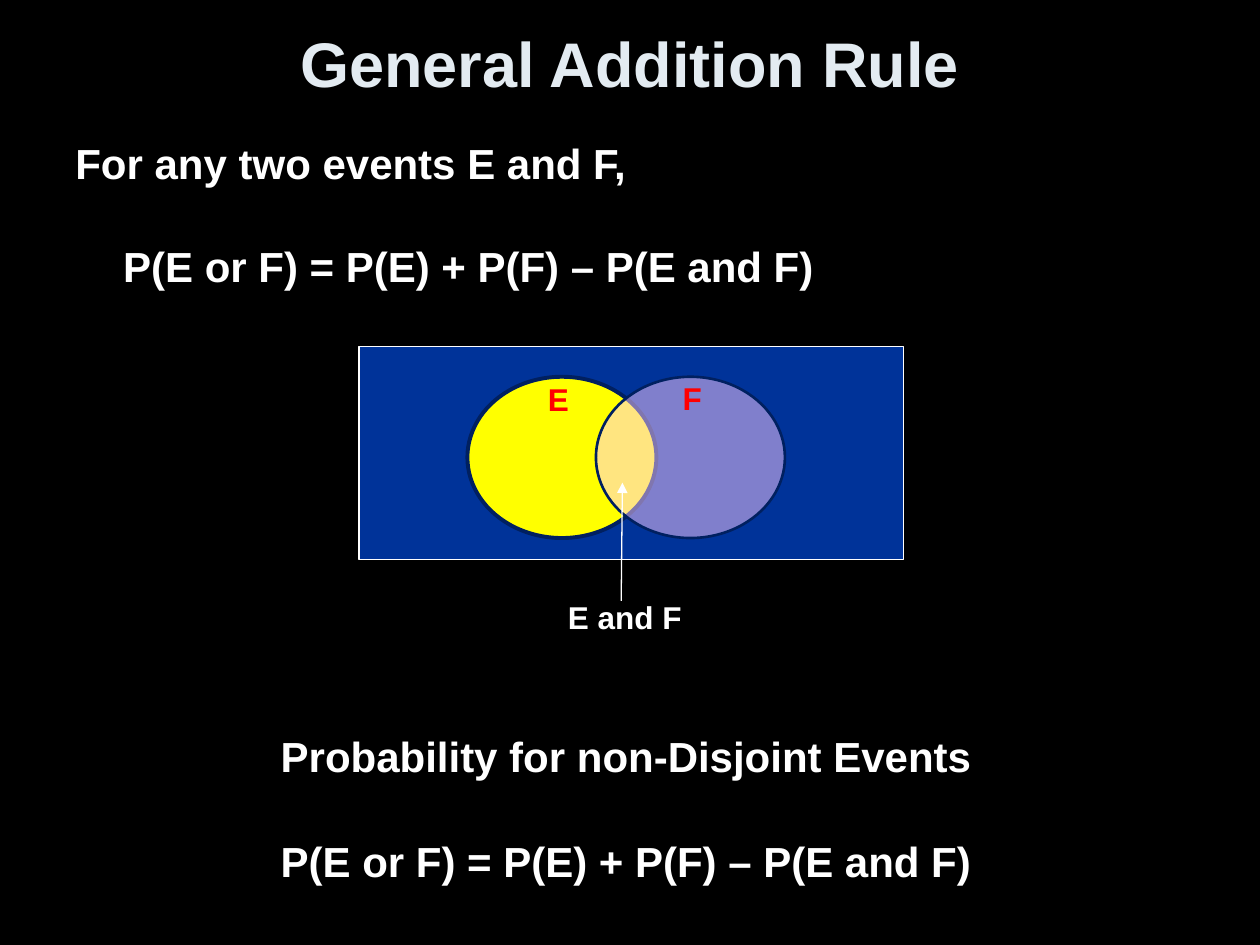
from lxml import etree
from pptx import Presentation
from pptx.dml.color import RGBColor
from pptx.enum.shapes import MSO_CONNECTOR, MSO_SHAPE
from pptx.enum.text import MSO_ANCHOR, PP_ALIGN
from pptx.oxml.ns import qn
from pptx.util import Inches, Pt

RECTANGLE, OVAL = MSO_SHAPE.RECTANGLE, MSO_SHAPE.OVAL
STRAIGHT = MSO_CONNECTOR.STRAIGHT
MIDDLE, CENTER = MSO_ANCHOR.MIDDLE, PP_ALIGN.CENTER

BLACK = RGBColor(0x00, 0x00, 0x00)
WHITE = RGBColor(0xFF, 0xFF, 0xFF)
PALE = RGBColor(0xE3, 0xEB, 0xF1)
BLUE = RGBColor(0x00, 0x33, 0x99)
NAVY = RGBColor(0x00, 0x20, 0x60)
YELLOW = RGBColor(0xFF, 0xFF, 0x00)
PINK = RGBColor(0xFF, 0xCC, 0xFF)
RED = RGBColor(0xFF, 0x00, 0x00)

FONT = "Arial"
RULE = "P(E or F) = P(E) + P(F) – P(E and F)"


def add_run(p, text, size, color):
    r = p.add_run()
    r.text = text
    r.font.name = FONT
    r.font.size = Pt(size)
    r.font.bold = True
    r.font.color.rgb = color


def add_text(shapes, text, left, top, width, height, size, color=WHITE, wrap=False):
    tf = shapes.add_textbox(Inches(left), Inches(top), Inches(width), Inches(height)).text_frame
    tf.word_wrap = wrap
    add_run(tf.paragraphs[0], text, size, color)
    return tf


def add_filled(shapes, kind, left, top, width, height, fill, line, line_width, alpha=None):
    """Add an outlined shape; alpha is the opacity of its fill in percent."""
    sp = shapes.add_shape(kind, Inches(left), Inches(top), Inches(width), Inches(height))
    sp.shadow.inherit = False
    sp.fill.solid()
    sp.fill.fore_color.rgb = fill
    sp.line.color.rgb = line
    sp.line.width = Pt(line_width)
    if alpha is not None:
        color = sp._element.spPr.find(qn("a:solidFill"))[0]
        etree.SubElement(color, qn("a:alpha"), val=str(alpha * 1000))


def add_arrow(shapes, x1, y1, x2, y2):
    line = shapes.add_connector(STRAIGHT, Inches(x1), Inches(y1), Inches(x2), Inches(y2))
    line.line.color.rgb = WHITE
    line.line.width = Pt(0.75)
    etree.SubElement(line.line._get_or_add_ln(), qn("a:tailEnd"), type="triangle")
    etree.SubElement(line._element.spPr, qn("a:effectLst"))


def add_title(shapes):
    tf = add_text(shapes, "General Addition Rule", 0.5, 0.08, 9, 0.83, 36, PALE, wrap=True)
    tf.vertical_anchor = MIDDLE
    tf.paragraphs[0].alignment = CENTER


def add_statement(shapes):
    tf = add_text(shapes, "For any two events E and F,", 0.5, 1, 9, 6.08, 24, wrap=True)
    tf.margin_top = Inches(0.09)
    p = tf.add_paragraph()
    p.space_before = Pt(30)
    p._p.get_or_add_pPr().set("marL", str(Inches(0.38)))
    add_run(p, RULE, 24, WHITE)


def add_venn(shapes):
    venn = shapes.add_group_shape().shapes
    add_filled(venn, RECTANGLE, 2.85, 2.75, 4.32, 1.69, BLUE, WHITE, 0.75)
    add_filled(venn, OVAL, 3.71, 2.99, 1.5, 1.28, YELLOW, NAVY, 2.25)
    add_filled(venn, OVAL, 4.73, 2.99, 1.5, 1.28, PINK, NAVY, 1.5, alpha=50)
    add_text(venn, "E", 4.25, 2.97, 0.37, 0.4, 18, RED)
    add_text(venn, "F", 5.32, 2.96, 0.35, 0.4, 18, RED)
    add_text(venn, "E and F", 4.41, 4.7, 1.1, 0.4, 18)
    add_arrow(venn, 4.93, 4.77, 4.94, 3.83)


def main():
    prs = Presentation()
    prs.slide_width, prs.slide_height = Inches(10), Inches(7.5)
    s = prs.slides.add_slide(prs.slide_layouts[6])
    s.background.fill.solid()
    s.background.fill.fore_color.rgb = BLACK

    add_title(s.shapes)
    add_statement(s.shapes)
    add_venn(s.shapes)
    add_text(s.shapes, RULE, 2.13, 6.58, 5.73, 0.51, 24)
    add_text(s.shapes, "Probability for non-Disjoint Events", 2.13, 5.75, 5.73, 0.51, 24)
    prs.save("out.pptx")


if __name__ == "__main__":
    main()
